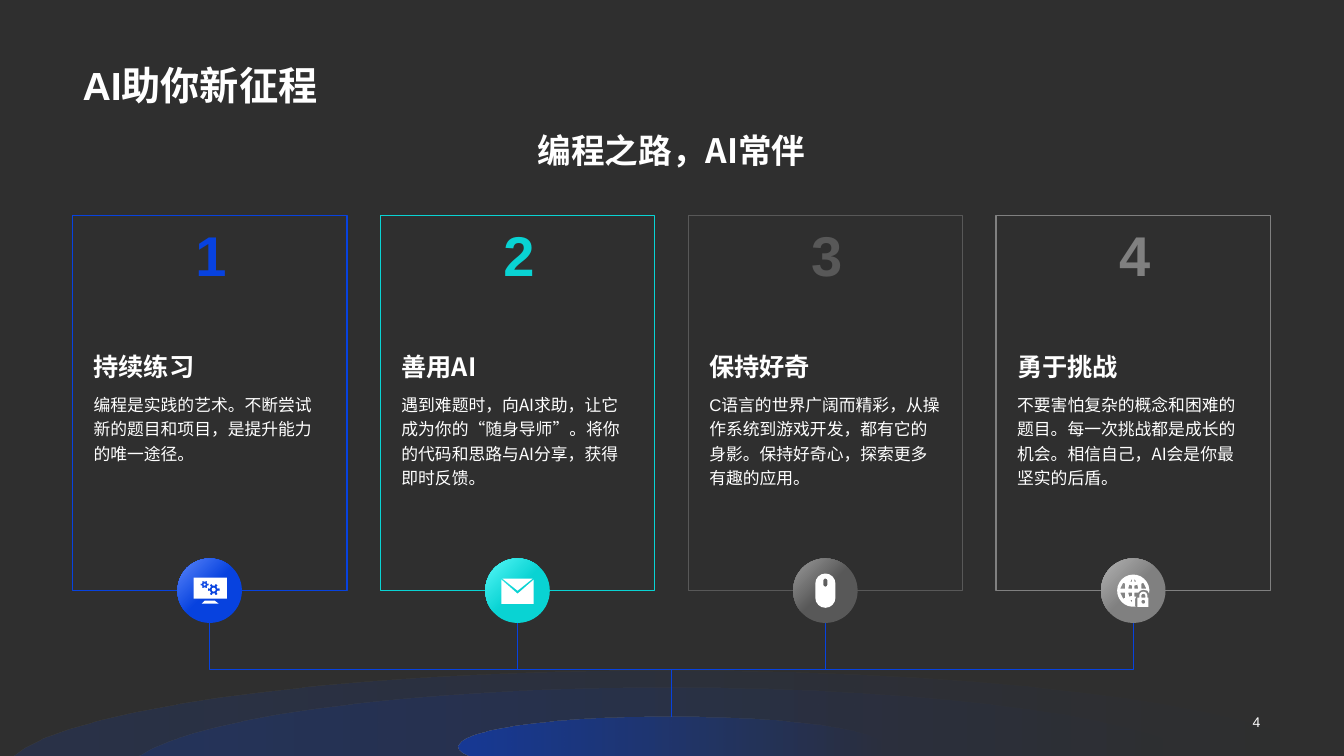
from math import acos, cos, degrees, radians, sin

from lxml.etree import SubElement
from pptx import Presentation
from pptx.dml.color import RGBColor
from pptx.enum.shapes import MSO_CONNECTOR as CONNECTOR, MSO_SHAPE as SHAPE
from pptx.enum.text import MSO_ANCHOR as ANCHOR, PP_ALIGN as ALIGN
from pptx.oxml.ns import qn
from pptx.util import Inches, Pt

BACKGROUND = RGBColor(0x2F, 0x2F, 0x2F)
WHITE = RGBColor(0xFF, 0xFF, 0xFF)
BLUE = RGBColor(0x07, 0x42, 0xDF)
LIGHT_BLUE = RGBColor(0x5C, 0x87, 0xFA)
CYAN = RGBColor(0x09, 0xD3, 0xD3)
LIGHT_CYAN = RGBColor(0x58, 0xF8, 0xF8)
DARK_GREY = RGBColor(0x58, 0x58, 0x58)
SOFT_GREY = RGBColor(0x9B, 0x9B, 0x9B)
GREY = RGBColor(0x80, 0x80, 0x80)
LIGHT_GREY = RGBColor(0xB3, 0xB3, 0xB3)

LATIN, CJK = "Arial", "Noto Sans CJK SC"
MARGIN, CONTENT_WIDTH = 0.72, 11.88
SLIDE_HEIGHT = 7.5
CARD_TOP, CARD_WIDTH, CARD_HEIGHT = 2.14, 2.72, 3.72
BADGE_Y, BADGE_SIZE = CARD_TOP + CARD_HEIGHT, 0.64
HUB_X, HUB_Y = 6.66, 7.11


def arc(x, y, radius_x, start=0, end=360, radius_y=None, steps=8):
    """Points on an ellipse; degrees run clockwise from the right."""
    radius_y = radius_y or radius_x
    angles = [radians(start + (end - start) * i / steps) for i in range(steps + 1)]
    return [(x + radius_x * cos(a), y + radius_y * sin(a)) for a in angles]


def gear(x, y, outer, inner, hole, teeth=6):
    """Contours of a toothed wheel and its hole."""
    pitch = 360 / teeth
    outline = []
    for tooth in range(teeth):
        for offset, radius in ((-0.25, inner), (-0.2, outer), (0.2, outer), (0.25, inner)):
            angle = radians((tooth + offset) * pitch)
            outline.append((x + radius * cos(angle), y + radius * sin(angle)))
    return [outline, arc(x, y, hole)]


def capsule(x, y, radius, reach):
    """An upright bar with round ends, its end centres at y ± reach."""
    return arc(x, y - reach, radius, 180, 360) + arc(x, y + reach, radius, 0, 180)


def monitor_icon():
    screen = [(-0.16, -0.13), (0.17, -0.13), (0.17, 0.08), (-0.16, 0.08)]
    stand = [(-0.05, 0.1), (0.05, 0.1), (0.09, 0.13), (-0.08, 0.13)]
    return [screen, stand, *gear(0.04, -0.01, 0.06, 0.04, 0.02),
            *gear(-0.05, -0.06, 0.04, 0.03, 0.01)]


def envelope_icon():
    body = [(-0.16, -0.11), (0, 0.03), (0.16, -0.11), (0.16, 0.13), (-0.16, 0.13)]
    flap = [(-0.15, -0.12), (0.15, -0.12), (0, 0)]
    return [body, flap]


def mouse_icon():
    return [capsule(0, 0, 0.1, 0.07), capsule(0, -0.08, 0.02, 0.02)]


def globe_icon():
    """A globe with cut-out cells, its lower right corner making room for a padlock."""
    notch = [(0.02, 0.16), (0.02, 0.08), (0.03, 0.06), (0.01, 0.06), (0.01, 0.02),
             (0.05, 0.02), (0.07, 0), (0.1, -0.01), (0.14, 0)]
    globe = arc(0, 0, 0.16, 80, 370, steps=20)[::-1] + notch[::-1]
    globe = arc(0, 0, 0.16, 80, 370, steps=20) + notch[::-1]
    quarter_cells = [
        [(0.01, -0.02), (0.05, -0.02), (0.04, -0.06), (0.01, -0.05)],
        [(0.08, -0.02), (0.13, -0.02), (0.1, -0.08), (0.08, -0.07)],
        [(0.01, -0.09), (0.03, -0.09), (0.01, -0.12)],
    ]
    cells = [[(x * side, y * half) for x, y in cell]
             for side, half in ((1, 1), (-1, 1), (-1, -1)) for cell in quarter_cells]
    padlock = [(0.04, 0.16), (0.04, 0.07), (0.06, 0.07), *arc(0.1, 0.05, 0.04, 180, 360),
               (0.14, 0.07), (0.15, 0.07), (0.15, 0.16)]
    shackle_gap = arc(0.1, 0.05, 0.02, 180, 360) + [(0.12, 0.07), (0.08, 0.07)]
    return [globe, *cells, padlock, shackle_gap, arc(0.1, 0.11, 0.02)]


CARDS = [
    ("持续练习", "编程是实践的艺术。不断尝试新的题目和项目，是提升能力的唯一途径。",
     BLUE, LIGHT_BLUE, CJK, monitor_icon),
    ("善用AI", "遇到难题时，向AI求助，让它成为你的“随身导师”。将你的代码和思路与AI分享，获得即时反馈。",
     CYAN, LIGHT_CYAN, CJK, envelope_icon),
    ("保持好奇", "C语言的世界广阔而精彩，从操作系统到游戏开发，都有它的身影。保持好奇心，探索更多有趣的应用。",
     DARK_GREY, SOFT_GREY, LATIN, mouse_icon),
    ("勇于挑战", "不要害怕复杂的概念和困难的题目。每一次挑战都是成长的机会。相信自己，AI会是你最坚实的后盾。",
     GREY, LIGHT_GREY, CJK, globe_icon),
]
CARD_PITCH = (CONTENT_WIDTH - CARD_WIDTH) / (len(CARDS) - 1)


class SlideBuilder:
    def __init__(self, slide):
        self.shapes = slide.shapes
        slide.background.fill.solid()
        slide.background.fill.fore_color.rgb = BACKGROUND

    def text(self, text, left, top, width, height, *, size, font=CJK, color=WHITE, bold=False,
             align=ALIGN.LEFT, anchor=ANCHOR.TOP, spacing=None, wrap=True):
        box = self.shapes.add_textbox(Inches(left), Inches(top), Inches(width), Inches(height))
        frame = box.text_frame
        frame.word_wrap = wrap
        frame.vertical_anchor = anchor
        paragraph = frame.paragraphs[0]
        paragraph.alignment = align
        paragraph.line_spacing = spacing
        run = paragraph.add_run()
        run.text = text
        run.font.size, run.font.bold, run.font.name = Pt(size), bold, font
        run.font.color.rgb = color
        SubElement(run.font._element, qn("a:ea")).set("typeface", CJK)

    def outline(self, contours):
        """A closed freeform without line; inner contours become holes."""
        contours = [[(Inches(x), Inches(y)) for x, y in contour] for contour in contours]
        builder = self.shapes.build_freeform(*contours[0][0], scale=1.0)
        for number, contour in enumerate(contours):
            if number:
                builder.move_to(*contour[0])
            builder.add_line_segments(contour[1:], close=True)
        shape = builder.convert_to_shape()
        shape.shadow.inherit = False
        shape.line.fill.background()
        return shape

    def gradient(self, shape, stops, angle):
        """Stops are (position, color, opacity percent)."""
        shape.fill.gradient()
        shape.fill.gradient_angle = angle
        for stop, (position, color, _) in zip(shape.fill.gradient_stops, stops):
            stop.position = position
            stop.color.rgb = color
        for element, (_, _, opacity) in zip(shape._element.xpath(".//a:gs/a:srgbClr"), stops):
            if opacity < 100:
                SubElement(element, qn("a:alpha")).set("val", str(opacity * 1000))

    def ripple(self, radius_x, radius_y, top, opacity):
        """An ellipse around the hub, cut off by the slide's lower edge."""
        center_y = top + radius_y
        spread = degrees(acos((center_y - SLIDE_HEIGHT) / radius_y))
        points = arc(HUB_X, center_y, radius_x, 270 - spread, 270 + spread, radius_y, 30)
        self.gradient(self.outline([points]), [(0, BLUE, opacity), (1, BLUE, 0)], 0)

    def branch(self, x):
        """An elbow line from a badge down to the hub."""
        start_y = BADGE_Y + BADGE_SIZE / 2
        middle_x, middle_y = (x + HUB_X) / 2, (start_y + HUB_Y) / 2
        run, drop = abs(x - HUB_X) / 2, (HUB_Y - start_y) / 2
        from_left = x < HUB_X
        side = 1 if from_left else -1
        line = self.shapes.add_connector(
            CONNECTOR.ELBOW, Inches(middle_x + side * drop), Inches(middle_y - run),
            Inches(middle_x - side * drop), Inches(middle_y + run))
        line.line.color.rgb = BLUE
        line.line.width = Pt(0.5)
        properties = line._element.spPr
        properties.find(qn("a:xfrm")).set("rot", str((270 if from_left else 90) * 60000))
        SubElement(properties, qn("a:effectLst"))

    def shape(self, kind, left, top, width, height):
        shape = self.shapes.add_shape(kind, Inches(left), Inches(top), Inches(width), Inches(height))
        shape.shadow.inherit = False
        return shape

    def card(self, number, left, heading, body, color, light, body_font, icon):
        frame = self.shape(SHAPE.RECTANGLE, left, CARD_TOP, CARD_WIDTH, CARD_HEIGHT)
        frame.fill.background()
        frame.line.color.rgb = color
        frame.line.width = Pt(1)
        self.text(heading, left + 0.11, 2.84, 2.5, 0.99, size=18, bold=True, anchor=ANCHOR.BOTTOM)
        self.text(body, left + 0.11, 3.83, 2.5, 1.33, size=12, font=body_font, spacing=1.2)
        center = left + CARD_WIDTH / 2
        badge = self.shape(SHAPE.OVAL, center - BADGE_SIZE / 2, BADGE_Y - BADGE_SIZE / 2,
                           BADGE_SIZE, BADGE_SIZE)
        badge.line.fill.background()
        self.gradient(badge, [(0.5, color, 100), (1, light, 100)], 135)
        symbol = self.outline([[(center + x, BADGE_Y + y) for x, y in part] for part in icon()])
        symbol.fill.solid()
        symbol.fill.fore_color.rgb = WHITE
        self.text(str(number), center - 0.24, CARD_TOP, 0.48, 0.77, size=40, font=LATIN, color=color,
                  bold=True, align=ALIGN.CENTER, anchor=ANCHOR.MIDDLE, wrap=False)


def main():
    presentation = Presentation()
    presentation.slide_width, presentation.slide_height = Inches(13.33), Inches(SLIDE_HEIGHT)
    builder = SlideBuilder(presentation.slides.add_slide(presentation.slide_layouts[6]))
    builder.text("4", 8.6, 7.01, 4, 0.3, size=10, font=LATIN, align=ALIGN.RIGHT, anchor=ANCHOR.MIDDLE)
    for ripple in ((6.63, 1.02, 6.65, 15), (5.43, 0.89, 6.82, 15), (2.11, 0.29, HUB_Y, 50)):
        builder.ripple(*ripple)
    builder.text("编程之路，AI常伴", MARGIN, 1.24, CONTENT_WIDTH, 0.5, size=24, bold=True,
                 align=ALIGN.CENTER, anchor=ANCHOR.MIDDLE)
    lefts = [MARGIN + i * CARD_PITCH for i in range(len(CARDS))]
    for left in lefts:
        builder.branch(left + CARD_WIDTH / 2)
    for number, (left, card) in enumerate(zip(lefts, CARDS), start=1):
        builder.card(number, left, *card)
    builder.text("AI助你新征程", MARGIN, 0.14, CONTENT_WIDTH, 0.98, size=28, font=LATIN, bold=True,
                 anchor=ANCHOR.BOTTOM)
    presentation.save("out.pptx")


if __name__ == "__main__":
    main()
